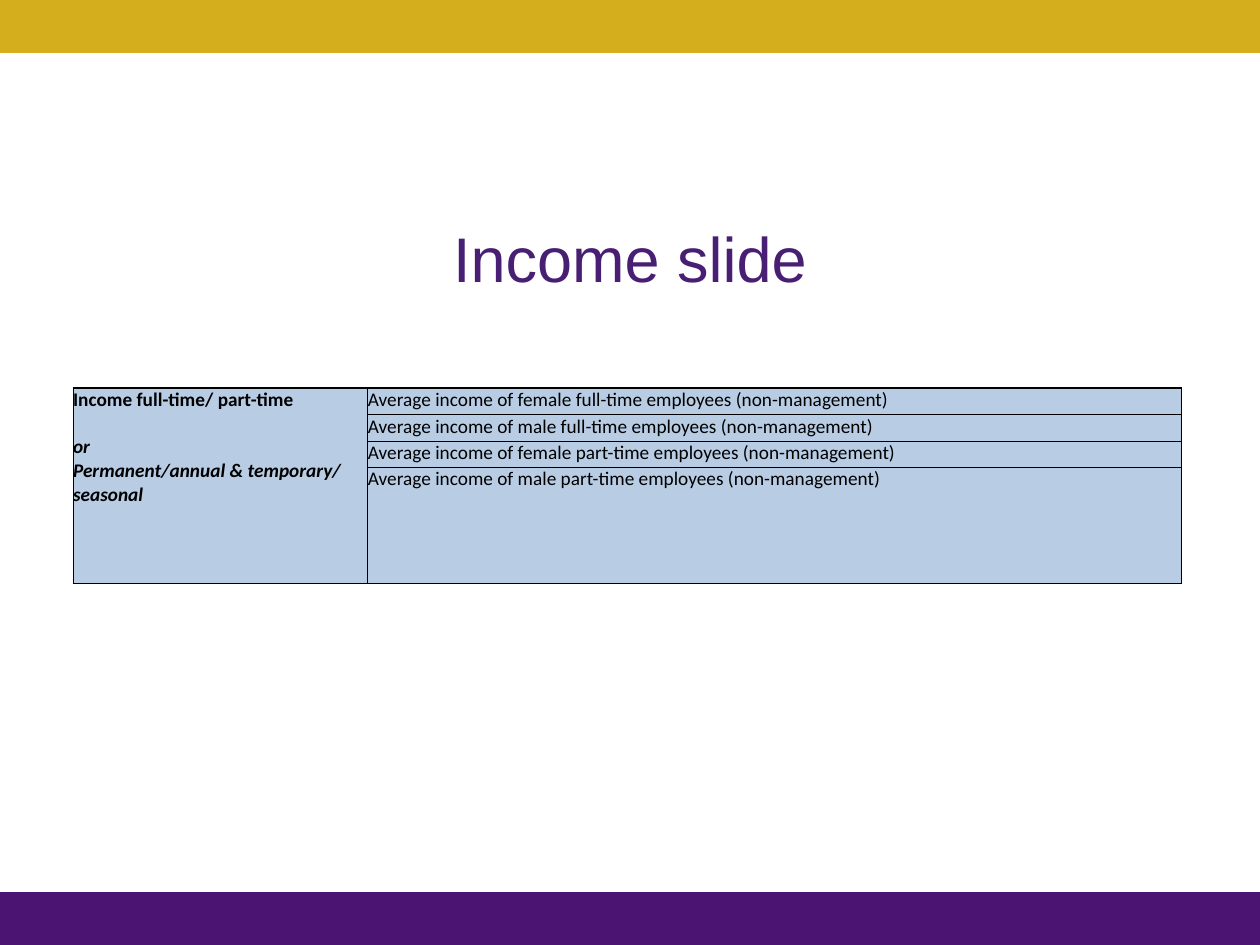
from lxml import etree
from pptx import Presentation
from pptx.dml.color import RGBColor
from pptx.enum.shapes import MSO_SHAPE
from pptx.enum.text import MSO_ANCHOR, PP_ALIGN
from pptx.oxml.ns import qn
from pptx.util import Inches, Pt

RECTANGLE = MSO_SHAPE.RECTANGLE
MIDDLE = MSO_ANCHOR.MIDDLE
CENTER = PP_ALIGN.CENTER

GOLD = RGBColor(0xD4, 0xAE, 0x1D)
PURPLE = RGBColor(0x4B, 0x14, 0x72)
TITLE_PURPLE = RGBColor(0x48, 0x1F, 0x72)
PALE_BLUE = RGBColor(0xB8, 0xCC, 0xE4)
BLACK = RGBColor(0, 0, 0)

TITLE_FONT = {"name": "Arial", "size": Pt(36)}
CELL_FONT = {"name": "Calibri", "size": Pt(11)}

BAND_HEIGHT = 0.42
COLUMN_WIDTHS = [2.34, 6.46]
ROW_HEIGHTS = [0.21, 0.21, 0.21, 0.42]
CATEGORY = [
    ("Income full-time/ part-time", {"bold": True}, 0),
    ("or", {"bold": True, "italic": True}, 13.4),
    ("Permanent/annual & temporary/ seasonal", {"bold": True, "italic": True}, 0),
]
GROUPS = ["female full-time", "male full-time", "female part-time", "male part-time"]


class SlideBuilder:
    def __init__(self, page):
        self.page = page

    def add_span(self, para, text, style, color):
        span = para.add_run()
        span.text = text
        for name, value in style.items():
            setattr(span.font, name, value)
        span.font.color.rgb = color

    def band(self, top, color):
        shape = self.page.shapes.add_shape(
            RECTANGLE, 0, Inches(top), Inches(10), Inches(BAND_HEIGHT))
        shape.shadow.inherit = False
        shape.fill.solid()
        shape.fill.fore_color.rgb = color
        shape.line.fill.background()

    def title(self, text, left, top, width, height):
        box = self.page.shapes.add_textbox(
            Inches(left), Inches(top), Inches(width), Inches(height))
        frame = box.text_frame
        frame.word_wrap = True
        frame.vertical_anchor = MIDDLE
        para = frame.paragraphs[0]
        para.alignment = CENTER
        self.add_span(para, text, TITLE_FONT, TITLE_PURPLE)

    def table(self, left, top, widths, heights):
        table = self.page.shapes.add_table(
            len(heights), len(widths), Inches(left), Inches(top),
            Inches(sum(widths)), Inches(sum(heights))).table
        for column, width in zip(table.columns, widths):
            column.width = Inches(width)
        for row, height in zip(table.rows, heights):
            row.height = Inches(height)
        last = len(heights) - 1
        for index, row in enumerate(table.rows):
            for cell in row.cells:
                self.style_cell(cell, 1 if index == 0 else 0.5, 1 if index == last else 0.5)
        return table

    def style_cell(self, cell, top_width, bottom_width):
        for side in ("left", "right", "top", "bottom"):
            setattr(cell, f"margin_{side}", 0)
        properties = cell._tc.get_or_add_tcPr()
        borders = {"a:lnL": 0.5, "a:lnR": 0.5, "a:lnT": top_width, "a:lnB": bottom_width}
        for tag, width in borders.items():
            line = etree.SubElement(properties, qn(tag), w=str(Pt(width)))
            fill = etree.SubElement(line, qn("a:solidFill"))
            etree.SubElement(fill, qn("a:srgbClr"), val=str(BLACK))
        cell.fill.solid()
        cell.fill.fore_color.rgb = PALE_BLUE

    def cell_text(self, cell, lines):
        """Fill a cell with (text, style, points before) lines as paragraphs."""
        frame = cell.text_frame
        for index, (text, style, before) in enumerate(lines):
            para = frame.add_paragraph() if index else frame.paragraphs[0]
            para.space_before = Pt(before)
            self.add_span(para, text, CELL_FONT | style, BLACK)


def main():
    deck = Presentation()
    deck.slide_width, deck.slide_height = Inches(10), Inches(7.5)
    builder = SlideBuilder(deck.slides.add_slide(deck.slide_layouts[6]))
    builder.band(0, GOLD)
    builder.band(7.5 - BAND_HEIGHT, PURPLE)
    builder.title("Income slide", 0.75, 1.42, 8.5, 1.25)

    table = builder.table(0.58, 3.08, COLUMN_WIDTHS, ROW_HEIGHTS)
    table.cell(0, 0).merge(table.cell(len(ROW_HEIGHTS) - 1, 0))
    builder.cell_text(table.cell(0, 0), CATEGORY)
    for row, group in enumerate(GROUPS):
        text = f"Average income of {group} employees (non-management)"
        builder.cell_text(table.cell(row, 1), [(text, {"bold": False}, 0)])
    deck.save("out.pptx")


if __name__ == "__main__":
    main()
